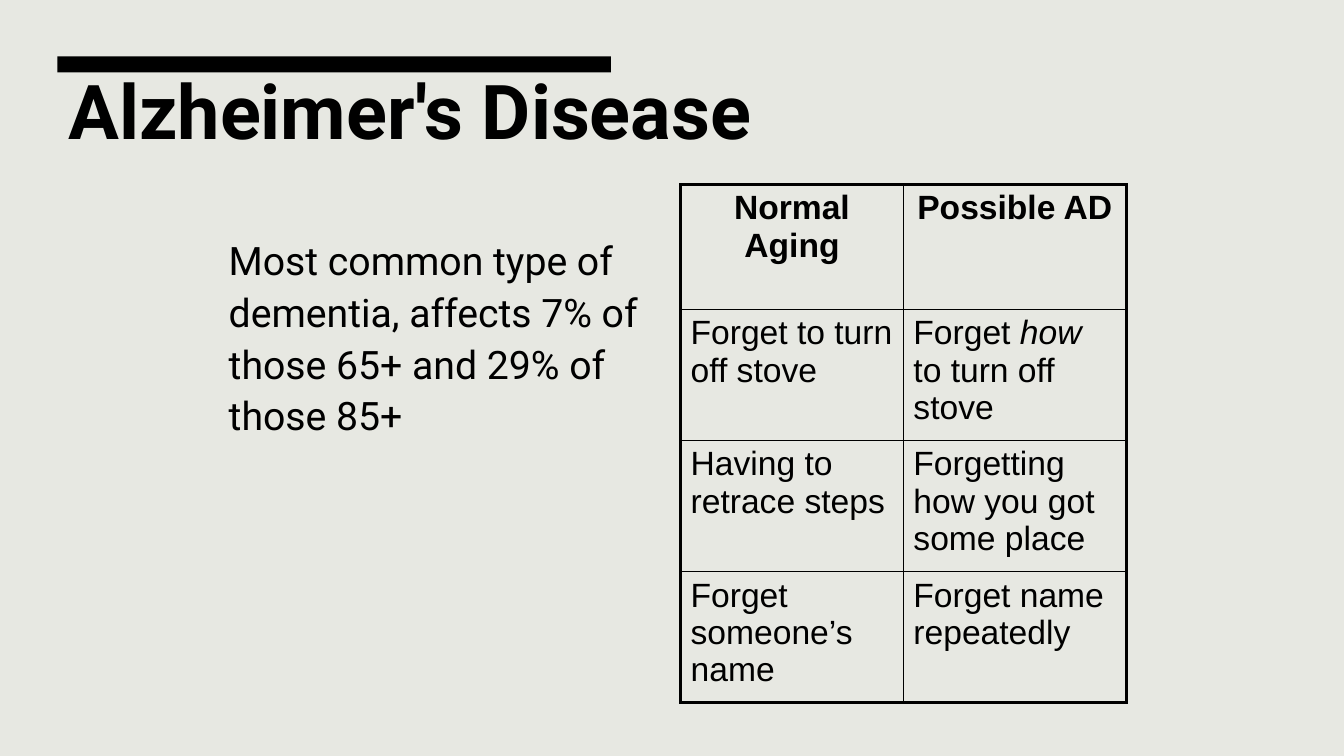
from lxml.etree import SubElement
from pptx import Presentation
from pptx.dml.color import RGBColor
from pptx.enum.shapes import MSO_SHAPE as Shape
from pptx.enum.text import MSO_ANCHOR as Anchor, PP_ALIGN as Align
from pptx.oxml.ns import qn
from pptx.util import Inches, Pt

TITLE = "Alzheimer's Disease"
BODY = "Most common type of dementia, affects 7% of those 65+ and 29% of those 85+"
ROWS = [
    (["Normal Aging"], ["Possible AD"]),
    (["Forget to turn off stove"], ["Forget ", "how", " to turn off stove"]),
    (["Having to retrace steps"], ["Forgetting how you got some place"]),
    (["Forget someone’s name"], ["Forget name repeatedly"]),
]
ITALIC_WORDS = {"how"}
ROW_HEIGHTS = [1.24, 1.3, 1.3, 1.3]
COLUMN_WIDTH = 2.21
BLACK, BACKGROUND = "000000", "E7E8E2"
THIN, THICK = 1, 2.25


def color(value):
    return RGBColor.from_string(value)


def add_run(paragraph, text, size, font, bold=False, italic=False):
    run = paragraph.add_run()
    run.text = text
    run.font.size = Pt(size)
    run.font.name = font
    run.font.bold = bold
    run.font.italic = italic
    run.font.color.rgb = color(BLACK)


def add_text(slide, box, text, size, bold=False, spacing=1.0):
    frame = slide.shapes.add_textbox(*map(Inches, box)).text_frame
    frame.word_wrap = True
    frame.vertical_anchor = Anchor.TOP
    paragraph = frame.paragraphs[0]
    paragraph.line_spacing = spacing
    add_run(paragraph, text, size, "Roboto", bold)


def set_borders(cell, widths):
    properties = cell._tc.get_or_add_tcPr()
    for position, (side, width) in enumerate(widths.items()):
        line = properties.makeelement(qn(f"a:{side}"), {"w": str(Pt(width))})
        fill = SubElement(line, qn("a:solidFill"))
        SubElement(fill, qn("a:srgbClr"), val=BLACK)
        properties.insert(position, line)


def add_comparison(slide):
    column_count = len(ROWS[0])
    frame = slide.shapes.add_table(
        len(ROWS), column_count, Inches(6.75), Inches(1.83),
        Inches(COLUMN_WIDTH * column_count), Inches(sum(ROW_HEIGHTS)))
    table = frame.table
    table.horz_banding = False
    for column in table.columns:
        column.width = Inches(COLUMN_WIDTH)
    for row_index, (row, height) in enumerate(zip(ROWS, ROW_HEIGHTS)):
        table.rows[row_index].height = Inches(height)
        for column_index, runs in enumerate(row):
            cell = table.cell(row_index, column_index)
            cell.fill.background()
            paragraph = cell.text_frame.paragraphs[0]
            header = row_index == 0
            paragraph.alignment = Align.CENTER if header else Align.LEFT
            for text in runs:
                add_run(paragraph, text, 24, "Arial", header, text in ITALIC_WORDS)
            outer = {
                "lnL": column_index == 0,
                "lnR": column_index == column_count - 1,
                "lnT": header,
                "lnB": row_index == len(ROWS) - 1,
            }
            set_borders(cell, {side: THICK if edge else THIN for side, edge in outer.items()})


def main():
    presentation = Presentation()
    presentation.slide_width = Inches(13.33)
    presentation.slide_height = Inches(7.5)
    slide = presentation.slides.add_slide(presentation.slide_layouts[6])
    slide.background.fill.solid()
    slide.background.fill.fore_color.rgb = color(BACKGROUND)

    bar = slide.shapes.add_shape(Shape.RECTANGLE, *map(Inches, (0.57, 0.56, 5.49, 0.16)))
    bar.shadow.inherit = False
    bar.fill.solid()
    bar.fill.fore_color.rgb = color(BLACK)
    bar.line.fill.background()

    add_text(slide, (0.58, 0.58, 12, 1.25), TITLE, 54, bold=True)
    add_text(slide, (2.17, 2.25, 4.42, 4.95), BODY, 28, spacing=1.1)
    add_comparison(slide)
    presentation.save("out.pptx")


if __name__ == "__main__":
    main()
